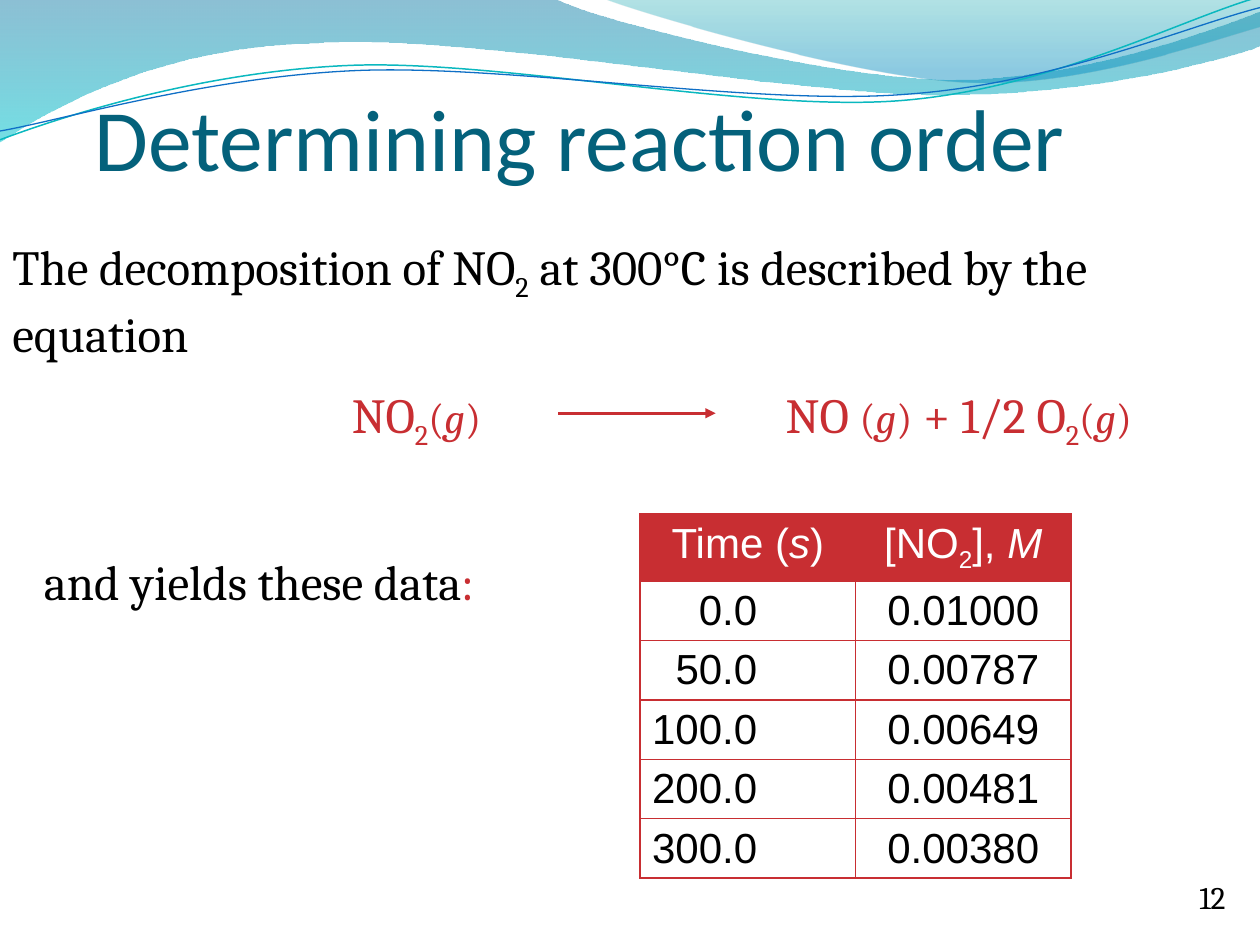
import math

import pptx
import pptx.dml.color
import pptx.enum.shapes
import pptx.enum.text
import pptx.oxml
import pptx.oxml.ns
import pptx.util
from lxml import etree

RGBColor = pptx.dml.color.RGBColor
Align = pptx.enum.text.PP_ALIGN
Anchor = pptx.enum.text.MSO_ANCHOR
qn = pptx.oxml.ns.qn

PX = 9144
WAVE_TURN = -2.7

BLACK = RGBColor(0x00, 0x00, 0x00)
WHITE = RGBColor(0xFF, 0xFF, 0xFF)
RED = RGBColor(0xC8, 0x2E, 0x32)
TITLE_TEAL = RGBColor(0x04, 0x61, 0x7B)
DEEP_BLUE = RGBColor(0x00, 0x74, 0xA1)
CYAN = RGBColor(0x00, 0xC6, 0xCF)
GREEN_TEAL = RGBColor(0x00, 0xA1, 0xA9)
SKY_BLUE = RGBColor(0x00, 0x8B, 0xBF)
LINE_TEAL = RGBColor(0x0A, 0xB8, 0xBF)
LINE_BLUE = RGBColor(0x0F, 0x6F, 0xC6)

LOWER_BAND = [
    [(0, 0)],
    [(440, -1)],
    [(476, 17), (664, 63), (758, 63)],
    [(853, 63), (958, 26), (1000, 9)],
    [(1001, 36)],
    [(983, 44), (870, 76), (746, 75)],
    [(622, 75), (382, 28), (257, 34)],
    [(129, 36), (46, 83), (-1, 113)],
    [(0, 0)],
]
UPPER_BAND = [
    [(479, -1)],
    [(509, 11), (682, 62), (769, 65)],
    [(856, 69), (961, 32), (1000, 21)],
    [(1000, 0)],
    [(479, -1)],
]
TEAL_WAVE = [
    [(0, 111)],
    [(48, 93), (158, 57), (277, 52)],
    [(395, 47), (593, 89), (713, 80)],
    [(833, 71), (938, 15), (998, -2)],
]
BLUE_WAVE = [
    [(0, 104)],
    [(47, 96), (164, 61), (283, 56)],
    [(403, 51), (597, 84), (717, 75)],
    [(836, 67), (941, 21), (1000, 6)],
]

NO2_GAS = [("NO", ""), ("2", "sub"), ("(", "small"), ("g", "small italic"), (")", "small")]
PRODUCTS = [("NO ", ""), ("(", "small"), ("g", "small italic"), (")", "small"),
            (" + 1/2 O", ""), ("2", "sub"),
            ("(", "small"), ("g", "small italic"), (")", "small")]
HEADINGS = [
    [("Time (", ""), ("s", "italic"), (")", "")],
    [("[NO", ""), ("2", "sub"), ("], ", ""), ("M", "italic")],
]
READINGS = [("0.0", "0.01000"), ("50.0", "0.00787"), ("100.0", "0.00649"),
            ("200.0", "0.00481"), ("300.0", "0.00380")]


def emu(*lengths):
    return [pptx.util.Emu(round(length * PX)) for length in lengths]


def write(para, spans, size, font, color, align=Align.LEFT):
    para.alignment = align
    for text, style in spans:
        span = para.add_run()
        span.text = text
        span.font.name = font
        span.font.size = pptx.util.Pt(24 if "small" in style else size)
        span.font.color.rgb = RED if "red" in style else color
        if "italic" in style:
            span.font.italic = True
        if "sub" in style:
            span._r.get_or_add_rPr().set("baseline", "-25000")


def add_text(slide, box, spans, color=BLACK, size=28, wrap=True, align=Align.LEFT):
    frame = slide.shapes.add_textbox(*emu(*box)).text_frame
    frame.word_wrap = wrap
    frame.auto_size = pptx.enum.text.MSO_AUTO_SIZE.SHAPE_TO_FIT_TEXT
    write(frame.paragraphs[0], spans, size, "Cambria", color, align)


def add_outline(slide, box, segments, turn=0, close=False):
    left, top, width, height = box
    builder = slide.shapes.build_freeform(*emu(left, top), scale=1.0)
    builder.add_line_segments([emu(left + width, top + height)], close=close)
    shape = builder.convert_to_shape()
    shape.shadow.inherit = False
    shape.rotation = turn % 360
    outline = next(shape._element.iter(qn("a:path")))
    for node in list(outline):
        outline.remove(node)
    cosine, sine = math.cos(math.radians(-turn)), math.sin(math.radians(-turn))
    for index, segment in enumerate(segments):
        kind = "cubicBezTo" if len(segment) == 3 else "lnTo" if index else "moveTo"
        command = etree.SubElement(outline, qn("a:" + kind))
        for x, y in segment:
            dx, dy = x - left - width / 2, y - top - height / 2
            across, down = emu(width / 2 + dx * cosine - dy * sine,
                               height / 2 + dx * sine + dy * cosine)
            etree.SubElement(command, qn("a:pt"), x=str(int(across)), y=str(int(down)))
    if close:
        etree.SubElement(outline, qn("a:close"))
    return shape


def add_band(slide, box, segments, stops):
    shape = add_outline(slide, box, segments, close=True)
    shape.line.fill.background()
    shape.fill.gradient()
    shape.fill.gradient_angle = 270
    for stop, (position, color, opacity) in zip(shape.fill.gradient_stops, stops):
        stop.position = position
        stop.color.rgb = color
    for node, (_, _, opacity) in zip(shape._element.spPr.iter(qn("a:srgbClr")), stops):
        etree.SubElement(node, qn("a:alpha")).set("val", str(opacity * 1000))


def add_wave(slide, box, segments, color, width):
    wave = add_outline(slide, box, segments, WAVE_TURN)
    wave.fill.background()
    wave.line.color.rgb = color
    wave.line.width = pptx.util.Pt(width)


def add_header_waves(slide):
    add_band(slide, (-1, -1, 1002, 114), LOWER_BAND, [(0, DEEP_BLUE, 45), (1, CYAN, 55)])
    add_band(slide, (479, -1, 521, 70), UPPER_BAND,
             [(0, GREEN_TEAL, 30), (0.8, SKY_BLUE, 45)])
    add_wave(slide, (-2, 22, 1002, 71), TEAL_WAVE, LINE_TEAL, 0.85)
    add_wave(slide, (-2, 30, 1003, 58), BLUE_WAVE, LINE_BLUE, 0.75)


def fill_title(slide, box):
    title = slide.shapes.title
    title.left, title.top, title.width, title.height = emu(*box)
    frame = title.text_frame
    frame.vertical_anchor = Anchor.BOTTOM
    frame.margin_left = frame.margin_right = frame.margin_bottom = 0
    frame.margin_top = emu(5)[0]
    write(frame.paragraphs[0], [("Determining reaction order", "")],
          50, "Calibri", TITLE_TEAL)


def add_equation(slide, box):
    left, top, width, height = box
    add_text(slide, (left, top, 145, height), NO2_GAS, RED, wrap=False, align=Align.CENTER)
    arrow = slide.shapes.add_connector(
        pptx.enum.shapes.MSO_CONNECTOR.STRAIGHT,
        *emu(left + 185, top + 28, left + 310, top + 28))
    arrow.line.color.rgb = RED
    arrow.line.width = pptx.util.Pt(1.75)
    etree.SubElement(arrow.line._get_or_add_ln(), qn("a:tailEnd")).set("type", "triangle")
    etree.SubElement(arrow._element.spPr, qn("a:effectLst"))
    add_text(slide, (left + 335, top, width - 335, height), PRODUCTS, RED,
             wrap=False, align=Align.CENTER)


def add_borders(cell):
    properties = cell._tc.get_or_add_tcPr()
    for index, side in enumerate(("lnL", "lnR", "lnT", "lnB")):
        border = etree.Element(qn("a:" + side), w="12700")
        fill = etree.SubElement(border, qn("a:solidFill"))
        etree.SubElement(fill, qn("a:srgbClr")).set("val", str(RED))
        properties.insert(index, border)


def add_data_table(slide, box):
    width, height = box[2:]
    rows = [HEADINGS] + [[[(value, "")] for value in reading] for reading in READINGS]
    table = slide.shapes.add_table(len(rows), 2, *emu(*box)).table
    row_height = 47
    header_height = height - row_height * len(READINGS)
    for column in table.columns:
        column.width = emu(width / 2)[0]
    for row_index, row in enumerate(rows):
        header = row_index == 0
        table.rows[row_index].height = emu(header_height if header else row_height)[0]
        for column_index, spans in enumerate(row):
            cell = table.cell(row_index, column_index)
            cell.fill.solid()
            cell.fill.fore_color.rgb = RED if header else WHITE
            add_borders(cell)
            align = Align.CENTER
            if column_index == 0 and not header:
                align = Align.RIGHT
                cell.margin_left, cell.margin_right = emu(0, 78)
            write(cell.text_frame.paragraphs[0], spans, 24, "Arial",
                  WHITE if header else BLACK, align)


def main():
    deck = pptx.Presentation()
    deck.slide_width, deck.slide_height = emu(1000, 750)
    slide = deck.slides.add_slide(deck.slide_layouts[5])
    add_header_waves(slide)
    fill_title(slide, (75, 25, 850, 125))
    add_data_table(slide, (508, 408, 342, 288))
    add_text(slide, (0, 183, 958, 103),
             [("The decomposition of NO", ""), ("2", "sub"),
              (" at 300°C is described by the equation", "")])
    add_equation(slide, (258, 300, 671, 57))
    add_text(slide, (25, 433, 399, 57),
             [("and yields these data", ""), (":", "red")], wrap=False)
    add_text(slide, (942, 692, 50, 40), [("12", "")], size=18)
    deck.save("out.pptx")


if __name__ == "__main__":
    main()
